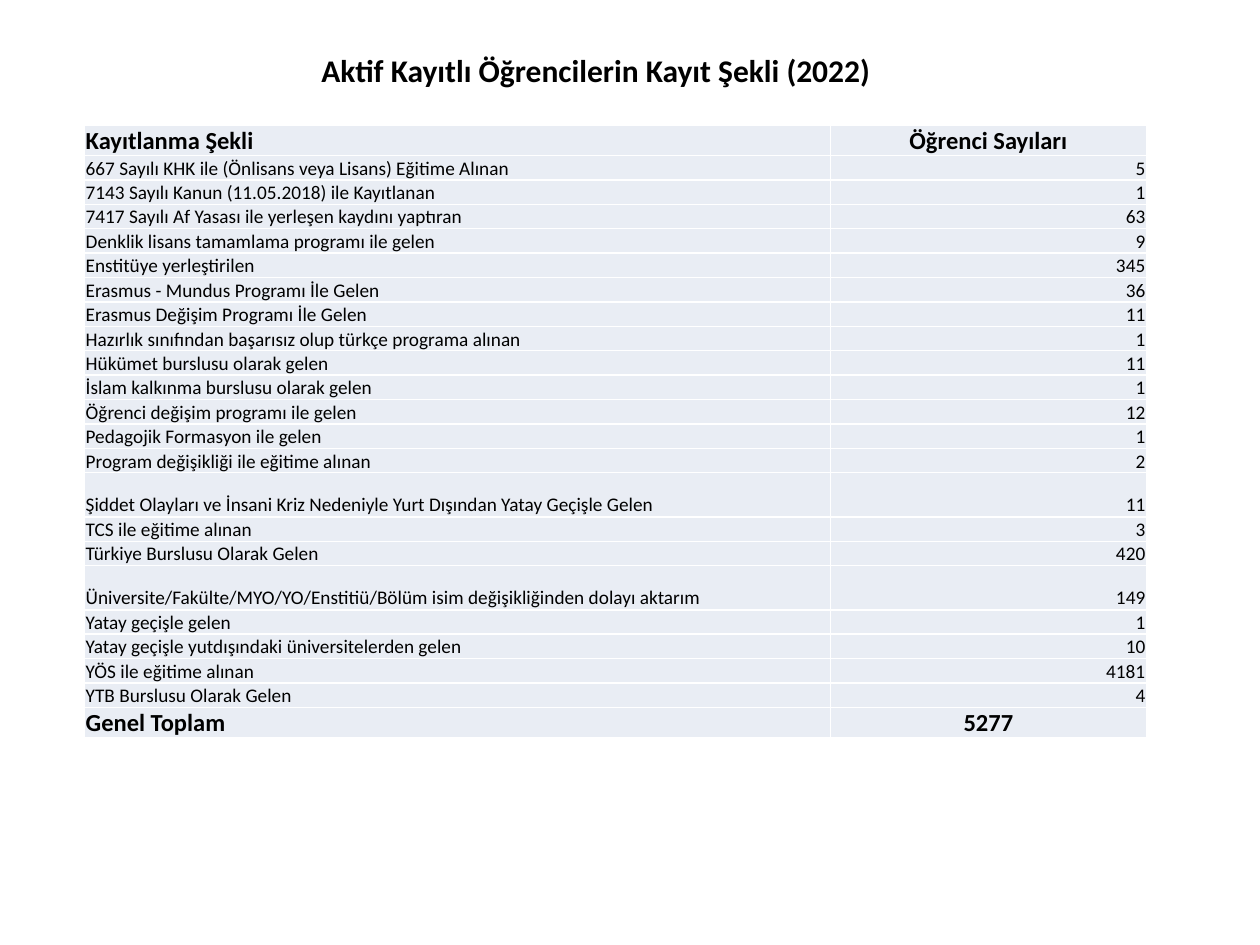
from dataclasses import dataclass

from lxml.etree import SubElement
from pptx import Presentation
from pptx.dml.color import RGBColor
from pptx.enum.text import MSO_ANCHOR, MSO_AUTO_SIZE, PP_ALIGN
from pptx.oxml.ns import qn
from pptx.slide import Slide
from pptx.table import Table, _Cell
from pptx.text.text import TextFrame
from pptx.util import Inches, Pt

BLACK = RGBColor(0x00, 0x00, 0x00)
WHITE = RGBColor(0xFF, 0xFF, 0xFF)
PALE_BLUE = RGBColor(0xE9, 0xED, 0xF4)
COLUMN_WIDTHS = (5.92, 2.51)
CELL_FORMAT = {
    "vertical_anchor": MSO_ANCHOR.BOTTOM,
    "margin_left": Inches(0.01),
    "margin_right": Inches(0.01),
    "margin_top": Inches(0.01),
    "margin_bottom": Inches(0),
}


@dataclass(frozen=True)
class Registration:
    label: str
    count: str
    height: float = 0.19
    size: int = 11
    bold: bool = False
    count_alignment: PP_ALIGN = PP_ALIGN.RIGHT


def summary(label: str, count: str, height: float) -> Registration:
    return Registration(label, count, height, 14, True, PP_ALIGN.CENTER)


REGISTRATIONS = (
    summary("Kayıtlanma Şekli", "Öğrenci Sayıları", 0.21),
    Registration("667 Sayılı KHK ile (Önlisans veya Lisans) Eğitime Alınan", "5"),
    Registration("7143 Sayılı Kanun (11.05.2018) ile Kayıtlanan", "1"),
    Registration("7417 Sayılı Af Yasası ile yerleşen kaydını yaptıran", "63"),
    Registration("Denklik lisans tamamlama programı ile gelen", "9"),
    Registration("Enstitüye yerleştirilen", "345"),
    Registration("Erasmus - Mundus Programı İle Gelen", "36"),
    Registration("Erasmus Değişim Programı İle Gelen", "11"),
    Registration("Hazırlık sınıfından başarısız olup türkçe programa alınan", "1"),
    Registration("Hükümet burslusu olarak gelen", "11"),
    Registration("İslam kalkınma burslusu olarak gelen", "1"),
    Registration("Öğrenci değişim programı ile gelen", "12"),
    Registration("Pedagojik Formasyon ile gelen", "1"),
    Registration("Program değişikliği ile eğitime alınan", "2"),
    Registration("Şiddet Olayları ve İnsani Kriz Nedeniyle Yurt Dışından Yatay Geçişle Gelen", "11", 0.35),
    Registration("TCS ile eğitime alınan", "3"),
    Registration("Türkiye Burslusu Olarak Gelen", "420"),
    Registration("Üniversite/Fakülte/MYO/YO/Enstitiü/Bölüm isim değişikliğinden dolayı aktarım", "149", 0.35),
    Registration("Yatay geçişle gelen", "1"),
    Registration("Yatay geçişle yutdışındaki üniversitelerden gelen", "10"),
    Registration("YÖS ile eğitime alınan", "4181"),
    Registration("YTB Burslusu Olarak Gelen", "4"),
    summary("Genel Toplam", "5277", 0.2),
)


def write_text(text_frame: TextFrame, text: str, size: int, bold: bool, alignment: PP_ALIGN) -> None:
    paragraph = text_frame.paragraphs[0]
    paragraph.alignment = alignment
    run = paragraph.add_run()
    run.text = text
    for name, value in {"name": "Calibri", "size": Pt(size), "bold": bold}.items():
        setattr(run.font, name, value)
    run.font.color.rgb = BLACK


def add_borders(cell: _Cell) -> None:
    properties = cell._tc.get_or_add_tcPr()
    for side in ("a:lnL", "a:lnR", "a:lnT", "a:lnB"):
        line = SubElement(properties, qn(side), w=str(Pt(1)))
        fill = SubElement(line, qn("a:solidFill"))
        SubElement(fill, qn("a:srgbClr"), val=str(WHITE))


def draw_cell(cell: _Cell, text: str, registration: Registration, alignment: PP_ALIGN) -> None:
    for name, value in CELL_FORMAT.items():
        setattr(cell, name, value)
    add_borders(cell)
    cell.fill.solid()
    cell.fill.fore_color.rgb = PALE_BLUE
    write_text(cell.text_frame, text, registration.size, registration.bold, alignment)


def draw_registration(table: Table, index: int, registration: Registration) -> None:
    table.rows[index].height = Inches(registration.height)
    draw_cell(table.cell(index, 0), registration.label, registration, PP_ALIGN.LEFT)
    draw_cell(table.cell(index, 1), registration.count, registration, registration.count_alignment)


def draw_table(slide: Slide) -> None:
    height = sum(registration.height for registration in REGISTRATIONS)
    table = slide.shapes.add_table(
        len(REGISTRATIONS), len(COLUMN_WIDTHS),
        Inches(0.67), Inches(0.99), Inches(sum(COLUMN_WIDTHS)), Inches(height),
    ).table
    table.first_row = False
    table.horz_banding = False
    for column, width in zip(table.columns, COLUMN_WIDTHS):
        column.width = Inches(width)
    for index, registration in enumerate(REGISTRATIONS):
        draw_registration(table, index, registration)


def draw_title(slide: Slide) -> None:
    title = slide.shapes.add_textbox(Inches(1.46), Inches(0.36), Inches(6.54), Inches(0.4))
    title.text_frame.word_wrap = True
    title.text_frame.auto_size = MSO_AUTO_SIZE.SHAPE_TO_FIT_TEXT
    write_text(title.text_frame, "Aktif Kayıtlı Öğrencilerin Kayıt Şekli (2022)", 18, True, PP_ALIGN.CENTER)


def main() -> None:
    """Build the slide of active students by registration type."""
    presentation = Presentation()
    presentation.slide_width = Inches(10)
    presentation.slide_height = Inches(7.5)
    slide = presentation.slides.add_slide(presentation.slide_layouts[6])
    draw_title(slide)
    draw_table(slide)
    presentation.save("out.pptx")


if __name__ == "__main__":
    main()
